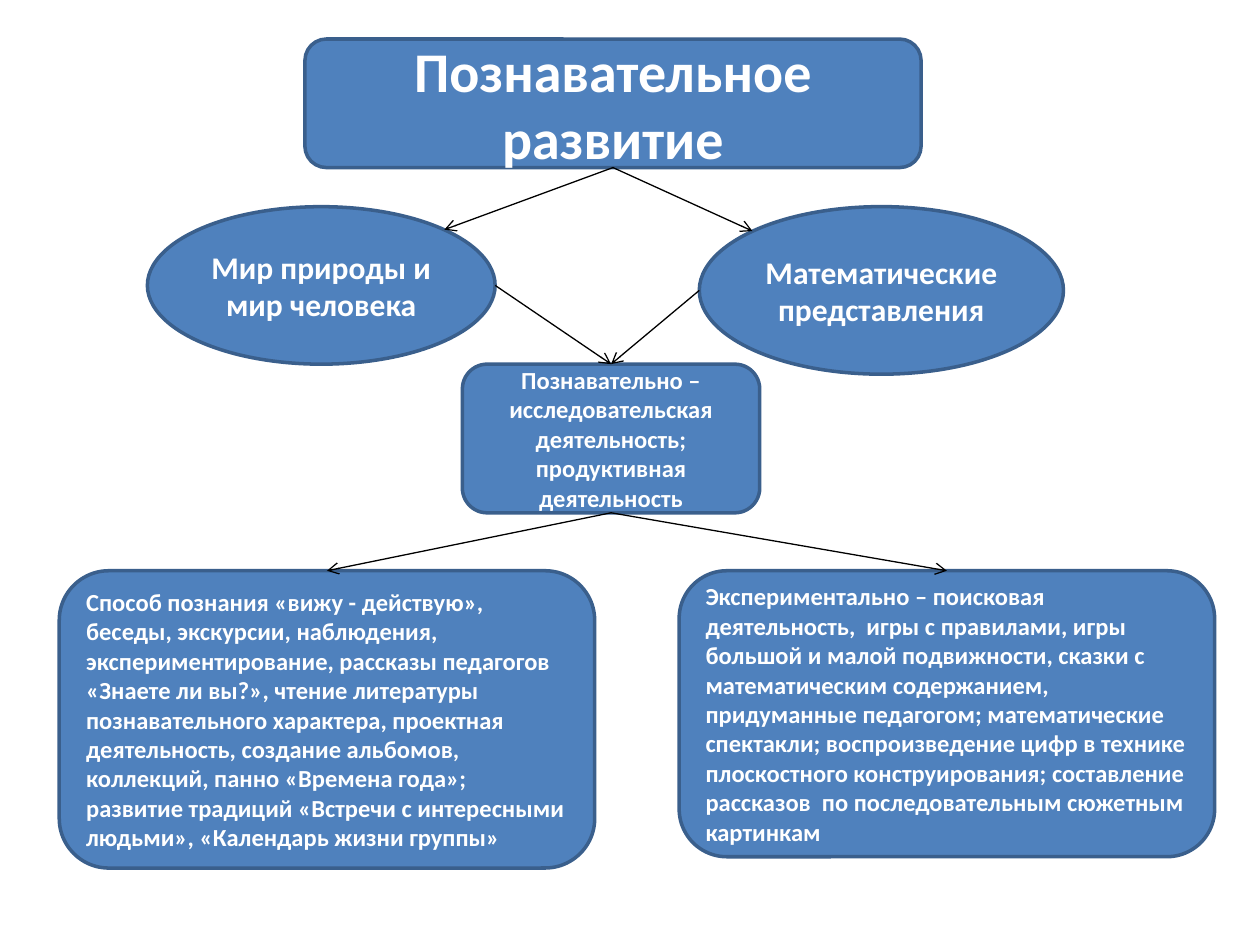
from lxml.etree import SubElement
from pptx import Presentation
from pptx.dml.color import RGBColor
from pptx.enum.shapes import MSO_CONNECTOR, MSO_SHAPE as SHAPE
from pptx.enum.text import MSO_ANCHOR, PP_ALIGN as ALIGN
from pptx.oxml.ns import qn
from pptx.util import Inches, Pt

COLORS = {"fill": "4F81BD", "border": "3A5F8C", "text": "FFFFFF", "arrow": "000000"}
FONT = "Calibri"
COLS, ROWS = 100, 75

# Points on a shape, as shares of its width and height
TOP, BOTTOM = (0.5, 0), (0.5, 1)
LEFT, RIGHT = (0, 0.5), (1, 0.5)
UPPER_LEFT, UPPER_RIGHT = (0.146, 0.146), (0.854, 0.146)  # ellipse at 45 degrees


def color(name):
    return RGBColor.from_string(COLORS[name])


class Diagram:
    """Draws styled nodes and arrows on a slide, measured in grid columns and rows."""

    def __init__(self, prs):
        self.slide = prs.slides.add_slide(prs.slide_layouts[6])
        self.col = prs.slide_width / COLS
        self.row = prs.slide_height / ROWS

    def node(self, kind, x, y, w, h, text, size, align=ALIGN.CENTER):
        sp = self.slide.shapes.add_shape(
            kind, int(x * self.col), int(y * self.row), int(w * self.col), int(h * self.row))
        sp.shadow.inherit = False
        sp.fill.solid()
        sp.fill.fore_color.rgb = color("fill")
        sp.line.color.rgb = color("border")
        sp.line.width = Pt(2)
        tf = sp.text_frame
        tf.word_wrap = True
        tf.vertical_anchor = MSO_ANCHOR.MIDDLE
        p = tf.paragraphs[0]
        p.text = text
        p.alignment = align
        p.font.name, p.font.size, p.font.bold = FONT, Pt(size), True
        p.font.color.rgb = color("text")
        return sp

    def arrow(self, start, start_at, end, end_at):
        """Join a point on one node to a point on another."""
        ends = [int(v) for sp, (fx, fy) in ((start, start_at), (end, end_at))
                for v in (sp.left + fx * sp.width, sp.top + fy * sp.height)]
        line = self.slide.shapes.add_connector(MSO_CONNECTOR.STRAIGHT, *ends)
        line.line.color.rgb = color("arrow")
        line.line.width = Pt(0.75)
        SubElement(line.line._get_or_add_ln(), qn("a:tailEnd"), type="arrow")
        SubElement(line._element.spPr, qn("a:effectLst"))


def main():
    prs = Presentation()
    prs.slide_width, prs.slide_height = Inches(10), Inches(7.5)
    d = Diagram(prs)

    title = d.node(SHAPE.ROUNDED_RECTANGLE, 24.2, 3.1, 48.9, 10.2,
                   "Познавательное развитие", 32)
    nature = d.node(SHAPE.OVAL, 11.7, 16.4, 27.6, 12.5, "Мир природы и мир человека", 18)
    maths = d.node(SHAPE.OVAL, 55.5, 16.4, 28.9, 13.3, "Математические представления", 18)
    activity = d.node(
        SHAPE.ROUNDED_RECTANGLE, 36.7, 28.9, 23.6, 11.8,
        "Познавательно – исследовательская деятельность; продуктивная деятельность", 14)
    methods = d.node(
        SHAPE.ROUNDED_RECTANGLE, 4.7, 45.3, 42.5, 23.6,
        "Способ познания «вижу - действую», беседы, экскурсии, наблюдения, "
        "экспериментирование, рассказы педагогов «Знаете ли вы?», чтение литературы "
        "познавательного характера, проектная деятельность, создание альбомов, коллекций, "
        "панно «Времена года»; развитие традиций «Встречи с интересными людьми», "
        "«Календарь жизни группы»", 14, ALIGN.LEFT)
    games = d.node(
        SHAPE.ROUNDED_RECTANGLE, 53.9, 45.3, 42.5, 22.7,
        "Экспериментально – поисковая деятельность,  игры с правилами, игры большой и малой "
        "подвижности, сказки с математическим содержанием, придуманные педагогом; "
        "математические спектакли; воспроизведение цифр в технике плоскостного "
        "конструирования; составление рассказов  по последовательным сюжетным картинкам",
        14, ALIGN.LEFT)

    for link in (
        (title, BOTTOM, nature, UPPER_RIGHT),
        (title, BOTTOM, maths, UPPER_LEFT),
        (maths, LEFT, activity, TOP),
        (nature, RIGHT, activity, TOP),
        (activity, BOTTOM, methods, TOP),
        (activity, BOTTOM, games, TOP),
    ):
        d.arrow(*link)

    prs.save("out.pptx")


if __name__ == "__main__":
    main()
